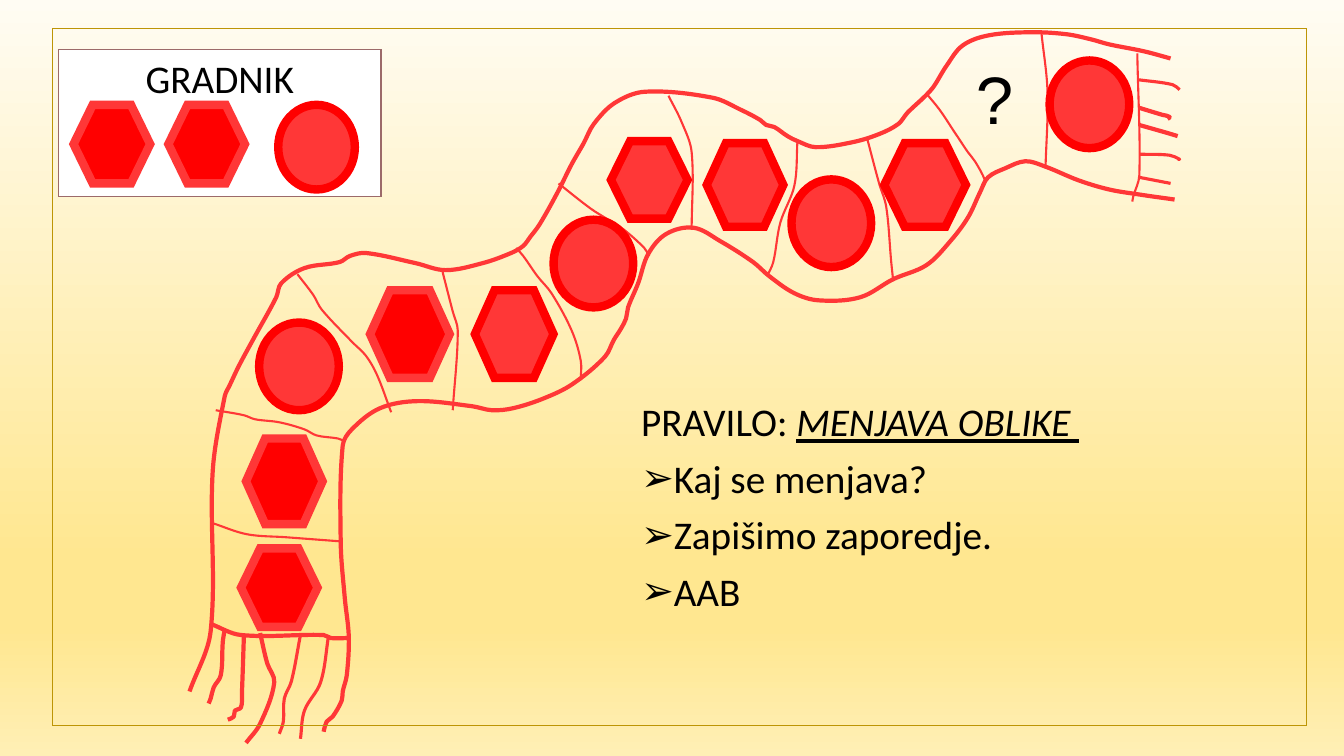
from math import dist

from lxml import etree
from pptx import Presentation
from pptx.dml.color import RGBColor
from pptx.enum.shapes import MSO_SHAPE
from pptx.enum.text import MSO_ANCHOR, PP_ALIGN
from pptx.oxml.ns import qn
from pptx.util import Inches, Pt

HEXAGON, ELLIPSE, RECTANGLE = MSO_SHAPE.HEXAGON, MSO_SHAPE.OVAL, MSO_SHAPE.RECTANGLE
CENTER, LEFT, TOP = PP_ALIGN.CENTER, PP_ALIGN.LEFT, MSO_ANCHOR.TOP
RED = RGBColor(0xFF, 0x00, 0x00)
CORAL = RGBColor(0xFF, 0x37, 0x37)
GOLD = RGBColor(0xBD, 0x95, 0x06)
MAUVE = RGBColor(0x9C, 0x6A, 0x6A)
WHITE = RGBColor(0xFF, 0xFF, 0xFF)
BLACK = RGBColor(0x00, 0x00, 0x00)
BACKGROUND_STOPS = [
    (0, RGBColor(0xFF, 0xFC, 0xF3)),
    (74, RGBColor(0xFF, 0xE7, 0x90)),
    (83, RGBColor(0xFF, 0xE7, 0x90)),
    (100, RGBColor(0xFF, 0xEF, 0xB5)),
]

UPPER_EDGE = [
    (1.88, 6.86), (2.09, 6.26), (2.11, 4.68), (2.23, 3.93), (2.28, 3.82), (2.37, 3.63),
    (2.51, 3.37), (2.74, 2.95), (2.79, 2.81), (3.02, 2.66), (3.37, 2.6), (3.47, 2.54),
    (3.63, 2.51), (4.12, 2.61), (4.42, 2.68), (4.79, 2.61), (5.07, 2.51), (5.19, 2.44),
    (5.26, 2.35), (5.35, 2.23), (5.53, 1.91), (5.67, 1.63), (5.79, 1.42), (5.89, 1.23),
    (6.1, 1.02), (6.4, 0.91), (7.07, 0.97), (7.35, 1.09), (7.54, 1.19), (7.6, 1.24),
    (7.68, 1.26), (7.81, 1.35), (7.91, 1.4), (8.09, 1.46), (8.46, 1.41), (8.72, 1.33),
    (8.91, 1.23), (9, 1.12), (9.18, 0.95), (9.26, 0.86), (9.39, 0.65), (9.55, 0.45),
    (9.81, 0.35), (10.23, 0.32), (10.58, 0.34), (10.82, 0.39), (11, 0.44), (11.35, 0.51),
    (11.61, 0.58),
]
LOWER_EDGE = [
    (3.21, 7.26), (3.24, 7.16), (3.3, 7.11), (3.39, 6.95), (3.4, 6.86), (3.44, 6.7),
    (3.46, 6.32), (3.42, 5.93), (3.38, 5.38), (3.4, 4.42), (3.49, 4.26), (3.77, 4.05),
    (4.14, 3.98), (4.68, 4.03), (4.88, 4.07), (5.09, 4.05), (5.4, 3.95), (5.68, 3.81),
    (6, 3.54), (6.09, 3.37), (6.16, 3.26), (6.21, 3.16), (6.23, 3.05), (6.33, 2.81),
    (6.43, 2.52), (6.61, 2.32), (6.88, 2.26), (7.14, 2.39), (7.47, 2.6), (7.63, 2.74),
    (7.88, 2.91), (8.12, 2.98), (8.53, 2.95), (8.86, 2.77), (9.19, 2.63), (9.42, 2.4),
    (9.6, 2.16), (9.72, 1.91), (9.8, 1.76), (9.97, 1.67), (10.17, 1.6), (10.36, 1.65),
    (10.7, 1.79), (11, 1.88), (11.3, 1.93), (11.65, 1.98),
]
DIVIDERS = [
    [(2.11, 5.19), (2.45, 5.3), (2.84, 5.33), (3.37, 5.37)],
    [(2.14, 4.07), (2.42, 4.12), (2.53, 4.16), (2.77, 4.19), (3.02, 4.26), (3.14, 4.32),
     (3.35, 4.35), (3.4, 4.37)],
    [(2.95, 2.72), (3.11, 2.93), (3.19, 3.07), (3.49, 3.39), (3.63, 3.53), (3.74, 3.72),
     (3.88, 4.09)],
    [(4.39, 2.7), (4.49, 3.09), (4.54, 3.28), (4.49, 4.07)],
    [(5.12, 2.46), (5.19, 2.54), (5.33, 2.74), (5.47, 2.91), (5.67, 3.28), (5.76, 3.58),
     (5.76, 3.77)],
    [(5.54, 1.82), (5.86, 2.07), (6.05, 2.19), (6.19, 2.28), (6.39, 2.46), (6.44, 2.54)],
    [(6.63, 0.95), (6.76, 1.21), (6.86, 1.51), (6.86, 2.28)],
    [(7.91, 1.4), (7.88, 1.84), (7.74, 2.21), (7.67, 2.6), (7.61, 2.74)],
    [(8.6, 1.37), (8.72, 1.82), (8.79, 2.05), (8.84, 2.6), (8.86, 2.79)],
    [(9.19, 0.93), (9.32, 1.09), (9.46, 1.3), (9.54, 1.42), (9.6, 1.51), (9.67, 1.6),
     (9.77, 1.79), (9.76, 1.84)],
    [(10.33, 0.33), (10.39, 0.91), (10.37, 1.67)],
    [(11.28, 0.53), (11.3, 1.74), (11.24, 1.95), (11.23, 2)],
]
THICK_FRINGE = [
    [(2.09, 6.19), (2.39, 6.3), (3.21, 6.3), (3.28, 6.33), (3.46, 6.33)],
    [(2.23, 6.24), (2.21, 6.37), (2.19, 6.7), (2.12, 6.82), (2.09, 6.93), (2.07, 6.98)],
    [(2.42, 6.3), (2.4, 6.88), (2.39, 7.02), (2.33, 7.05), (2.32, 7.11), (2.26, 7.14)],
    [(2.58, 6.28), (2.65, 6.58), (2.72, 6.77), (2.58, 7.18), (2.44, 7.37)],
    [(11.3, 1.07), (11.53, 1.14), (11.6, 1.16), (11.58, 1.18)],
    [(11.3, 1.24), (11.58, 1.32), (11.68, 1.35)],
]
THIN_FRINGE = [
    [(3.26, 6.3), (3.18, 6.77), (3.02, 7.05), (2.98, 7.33)],
    [(2.98, 6.3), (2.89, 6.76), (2.82, 6.93), (2.81, 7.16), (2.77, 7.28)],
    [(11.28, 0.79), (11.63, 0.84), (11.7, 0.89)],
    [(11.3, 1.76), (11.61, 1.82)],
    [(11.3, 1.53), (11.6, 1.54), (11.7, 1.58), (11.68, 1.58)],
]
BEADS = [
    (HEXAGON, 2.39, 5.44, 0.76, 0.78, RED, CORAL),
    (HEXAGON, 2.44, 4.35, 0.76, 0.85, RED, CORAL),
    (HEXAGON, 3.67, 2.88, 0.79, 0.87, RED, CORAL),
    (HEXAGON, 4.71, 2.88, 0.78, 0.87, CORAL, RED),
    (HEXAGON, 6.06, 1.4, 0.76, 0.77, CORAL, RED),
    (HEXAGON, 7.01, 1.42, 0.76, 0.83, CORAL, RED),
    (HEXAGON, 8.77, 1.42, 0.81, 0.83, CORAL, RED),
] + [
    (ELLIPSE, left, top, 0.79, 0.87, CORAL, RED)
    for left, top in [(2.57, 3.2), (5.49, 2.18), (7.85, 1.78), (10.41, 0.6)]
]


def add_figure(slide, kind, left, top, width, height, fill, line, weight=6):
    shape = slide.shapes.add_shape(kind, Inches(left), Inches(top), Inches(width), Inches(height))
    shape.shadow.inherit = False
    if fill is None:
        shape.fill.background()
    else:
        shape.fill.solid()
        shape.fill.fore_color.rgb = fill
    shape.line.color.rgb = line
    shape.line.width = Pt(weight)
    etree.SubElement(shape.line._get_or_add_ln(), qn("a:miter"), lim="800000")
    return shape


def bezier_points(knots):
    padded = [knots[0], *knots, knots[-1]]
    points = [knots[0]]
    for before, start, end, after in zip(padded, padded[1:], padded[2:], padded[3:]):
        reach = dist(start, end) / 3
        leave = reach / dist(before, end)
        arrive = reach / dist(start, after)
        points.append(tuple(s + (e - b) * leave for b, s, e in zip(before, start, end)))
        points.append(tuple(e - (a - s) * arrive for s, e, a in zip(start, end, after)))
        points.append(end)
    return points


def add_curve(slide, left, top, knots, weight):
    points = [(Inches(left + x), Inches(top + y)) for x, y in bezier_points(knots)]
    builder = slide.shapes.build_freeform(*points[0], scale=1.0)
    builder.add_line_segments(points[1:], close=False)
    shape = builder.convert_to_shape()
    segments = shape._element.findall(".//" + qn("a:lnTo"))
    for first, second, third in zip(segments[::3], segments[1::3], segments[2::3]):
        curve = etree.SubElement(first.getparent(), qn("a:cubicBezTo"))
        for segment in (first, second, third):
            curve.append(segment[0])
            segment.getparent().remove(segment)
    shape.shadow.inherit = False
    shape.fill.background()
    shape.line.color.rgb = CORAL
    shape.line.width = Pt(weight)


def add_run(paragraph, text, size=28, font="Calibri", **emphasis):
    run = paragraph.add_run()
    run.text = text
    run.font.size = Pt(size)
    run.font.name = font
    run.font.color.rgb = BLACK
    for name, value in emphasis.items():
        setattr(run.font, name, value)


def add_text_box(slide, left, top, width, height):
    box = slide.shapes.add_textbox(Inches(left), Inches(top), Inches(width), Inches(height))
    box.text_frame.word_wrap = True
    return box.text_frame


def paint_background(slide):
    fill = slide.background.fill
    fill.gradient()
    fill.gradient_angle = 270
    stops = slide.element.find(".//" + qn("a:gsLst"))
    for stop in list(stops):
        stops.remove(stop)
    for position, color in BACKGROUND_STOPS:
        stop = etree.SubElement(stops, qn("a:gs"), pos=str(position * 1000))
        etree.SubElement(stop, qn("a:srgbClr"), val=str(color))


def draw_snake(slide, left, top):
    for curves, weight in [([UPPER_EDGE, LOWER_EDGE], 3), (DIVIDERS, 1.5),
                           (THICK_FRINGE, 3), (THIN_FRINGE, 2.25)]:
        for knots in curves:
            add_curve(slide, left, top, knots, weight)
    for kind, x, y, width, height, fill, line in BEADS:
        add_figure(slide, kind, left + x, top + y, width, height, fill, line)
    frame = add_text_box(slide, left + 9.58, top + 0.52, 0.63, 0.9)
    add_run(frame.paragraphs[0], "?", size=48, font="Arial")


def write_rule(slide, left, top, width, height):
    frame = add_text_box(slide, left, top, width, height)
    heading = frame.paragraphs[0]
    add_run(heading, "PRAVILO: ")
    add_run(heading, "MENJAVA OBLIKE ", italic=True, underline=True)
    for text in ["Kaj se menjava?", "Zapišimo zaporedje.", "AAB"]:
        add_run(frame.add_paragraph(), text)
    for paragraph in frame.paragraphs:
        paragraph.alignment = LEFT
        paragraph.line_spacing = 0.9
        paragraph.space_before = Pt(10)
    for paragraph in frame.paragraphs[1:]:
        properties = paragraph._p.get_or_add_pPr()
        properties.set("marL", str(Inches(0.25)))
        properties.set("indent", str(-Inches(0.25)))
        etree.SubElement(properties, qn("a:buFont"), typeface="Arial")
        etree.SubElement(properties, qn("a:buChar"), char="➢")


def draw_unit(slide, left, top, width, height):
    panel = add_figure(slide, RECTANGLE, left, top, width, height, WHITE, MAUVE, weight=1)
    panel.text_frame.vertical_anchor = TOP
    title = panel.text_frame.paragraphs[0]
    title.alignment = CENTER
    add_run(title, "GRADNIK")
    for x in (0.15, 1.09):
        add_figure(slide, HEXAGON, left + x, top + 0.55, 0.76, 0.78, RED, CORAL)
    add_figure(slide, ELLIPSE, left + 2.18, top + 0.55, 0.76, 0.84, CORAL, RED)


presentation = Presentation()
presentation.slide_width = Inches(13.33)
presentation.slide_height = Inches(7.5)
slide = presentation.slides.add_slide(presentation.slide_layouts[6])
paint_background(slide)
draw_snake(slide, 0, 0)
write_rule(slide, 6.26, 3.95, 6.55, 3.24)
draw_unit(slide, 0.58, 0.49, 3.2, 1.46)
add_figure(slide, RECTANGLE, 0.52, 0.28, 12.44, 6.92, None, GOLD, weight=1)
presentation.save("out.pptx")
